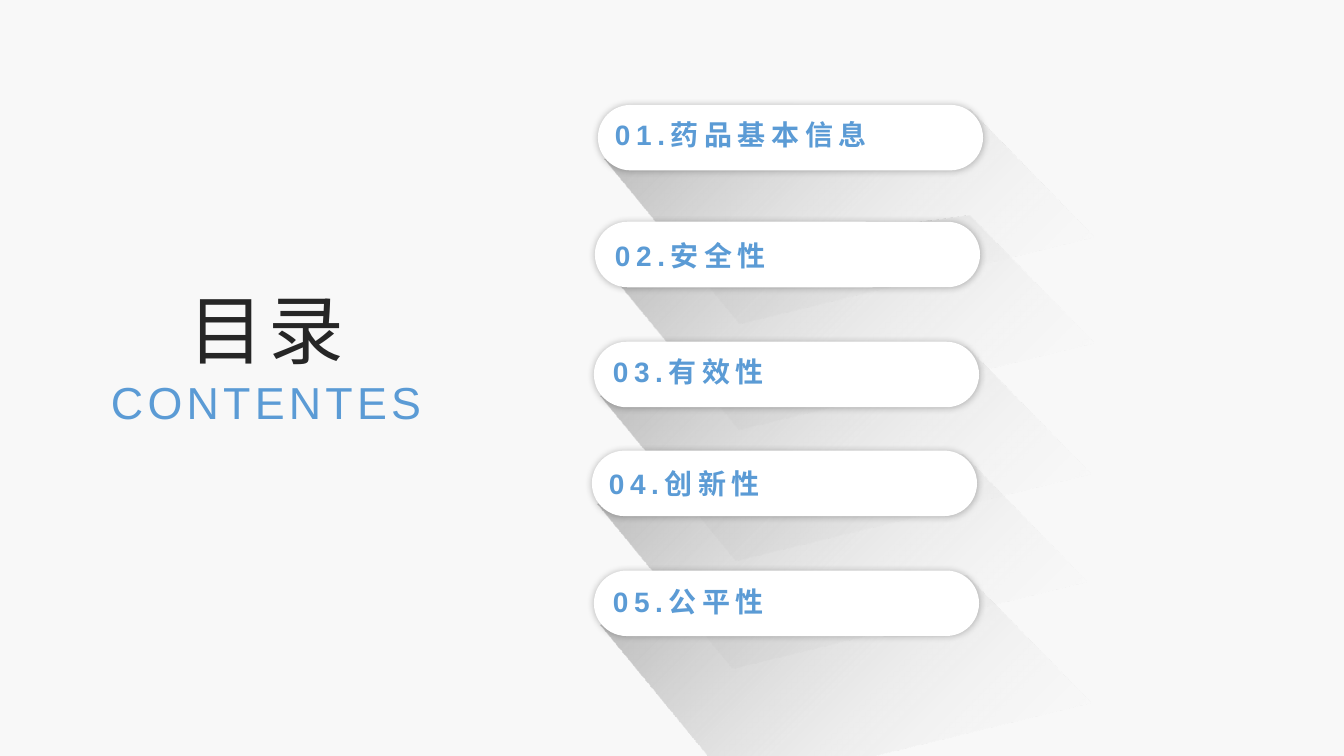
import pptx
import pptx.dml.color
import pptx.enum.shapes
import pptx.enum.text
import pptx.oxml
import pptx.oxml.ns
import pptx.util

COLS, ROWS = 1333, 750
CELL = pptx.util.Inches(0.01)
HUES = {"back": "F8F8F8", "ink": "262626", "blue": "5B9BD5",
        "white": "FFFFFF", "gray": "BFBFBF"}
PILL = (382, 65)
LABEL = (365, 44)
# Corners of the long shadow, in cells from its top left
CAST = [(0, 49), (362, 0), (485, 126), (134, 212)]
# Text, pill corner, shadow offset and label offset from the pill
ITEMS = [
    ("01.药品基本信息", (593, 104), (7, 5), (7, 8)),
    ("02.安全性", (590, 220), (9, -6), (10, 12)),
    ("03.有效性", (589, 339), (7, 5), (9, 8)),
    ("04.创新性", (587, 447), (6, 4), (7, 11)),
    ("05.公平性", (589, 566), (7, 5), (9, 9)),
]
SHADE = (
    '<a:effectLst xmlns:a="http://schemas.openxmlformats.org/drawingml/2006/main">'
    '<a:outerShdw blurRad="63500" dist="0" dir="0" algn="ctr" rotWithShape="0">'
    '<a:srgbClr val="000000"><a:alpha val="24000"/></a:srgbClr>'
    '</a:outerShdw></a:effectLst>')


def tint(name):
    return pptx.dml.color.RGBColor.from_string(HUES[name])


def grid(*cells):
    return [CELL * n for n in cells]


def write(shape, text, size, hue, align, space, bold=False):
    """Fill a text shape with one styled, letter-spaced line."""
    frame = shape.text_frame
    frame.text = text
    frame.word_wrap = True
    frame.auto_size = pptx.enum.text.MSO_AUTO_SIZE.NONE
    frame.vertical_anchor = pptx.enum.text.MSO_ANCHOR.TOP
    line = frame.paragraphs[0]
    line.alignment = align
    line.space_before = pptx.util.Pt(0)
    run = line.runs[0]
    run.font.name = "Arial"
    run.font.size = pptx.util.Pt(size)
    run.font.bold = bold
    run.font.color.rgb = tint(hue)
    run.font._element.set("spc", str(space * 100))


def add_head(slide):
    mid = pptx.enum.text.PP_ALIGN.CENTER
    parts = [("目录", 54, "ink", (124, 276, 281, 101)),
             ("CONTENTES", 32, "blue", (97, 367, 334, 64))]
    for holder, (text, size, hue, box) in zip(slide.placeholders, parts):
        holder.left, holder.top, holder.width, holder.height = grid(*box)
        write(holder, text, size, hue, mid, 3)


def add_cast(shapes, left, top):
    """Draw the long shadow, fading to clear at the lower right."""
    spots = [(left + x, top + y) for x, y in CAST]
    pen = shapes.build_freeform(*spots[0], scale=CELL)
    pen.add_line_segments(spots[1:], close=True)
    cast = pen.convert_to_shape()
    cast.shadow.inherit = False
    cast.line.fill.background()
    cast.fill.gradient()
    cast.fill.gradient_angle = 135
    stops = cast.fill.gradient_stops
    for stop, hue, spot in zip(stops, ("white", "gray"), (0, 0.92)):
        stop.color.rgb = tint(hue)
        stop.position = spot
    clear = next(cast.element.iter(pptx.oxml.ns.qn("a:srgbClr")))
    clear.append(pptx.oxml.parse_xml(
        '<a:alpha xmlns:a="http://schemas.openxmlformats.org/drawingml/2006/main"'
        ' val="0"/>'))


def add_pill(shapes, left, top):
    kind = pptx.enum.shapes.MSO_SHAPE.ROUNDED_RECTANGLE
    pill = shapes.add_shape(kind, *grid(left, top, *PILL))
    pill.adjustments[0] = 0.5
    pill.fill.solid()
    pill.fill.fore_color.rgb = tint("white")
    pill.line.fill.background()
    pill.element.spPr.append(pptx.oxml.parse_xml(SHADE))


def add_item(slide, text, spot, cast, label):
    left, top = spot
    shapes = slide.shapes.add_group_shape().shapes
    add_cast(shapes, left + cast[0], top + cast[1])
    add_pill(shapes, left, top)
    box = shapes.add_textbox(*grid(left + label[0], top + label[1], *LABEL))
    write(box, text, 20, "blue", pptx.enum.text.PP_ALIGN.LEFT, 4, True)


def main():
    deck = pptx.Presentation()
    deck.slide_width, deck.slide_height = grid(COLS, ROWS)
    slide = deck.slides.add_slide(deck.slide_layouts[0])
    slide.background.fill.solid()
    slide.background.fill.fore_color.rgb = tint("back")
    add_head(slide)
    for item in ITEMS:
        add_item(slide, *item)
    deck.save("out.pptx")


if __name__ == "__main__":
    main()
